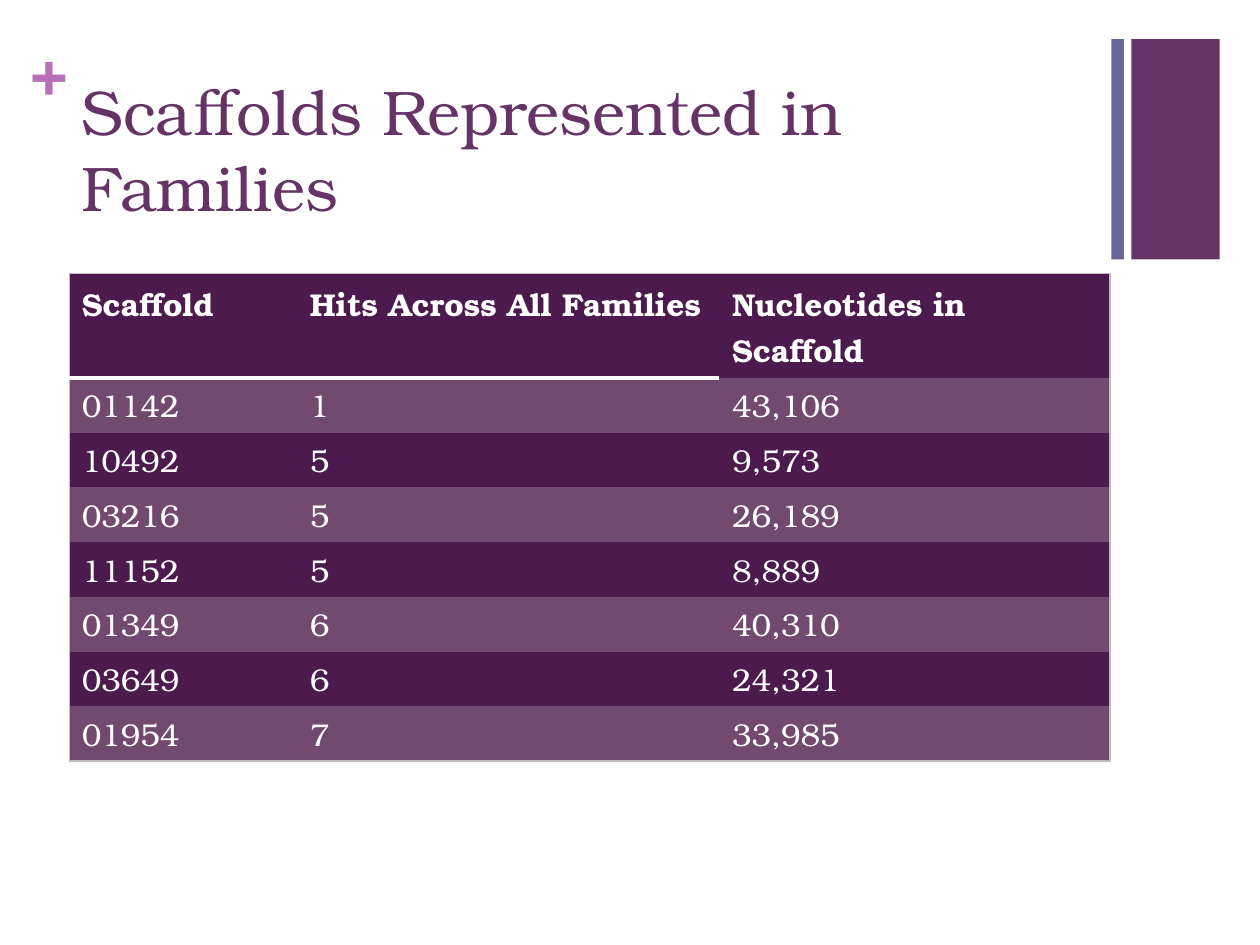
"""Build a slide with a table of scaffolds represented in families."""
from pptx import Presentation
from pptx.dml.color import RGBColor as RGB
from pptx.enum.shapes import MSO_SHAPE as Shape
from pptx.enum.text import MSO_ANCHOR as Anchor
from pptx.oxml import parse_xml
from pptx.oxml.ns import nsdecls, qn
from pptx.util import Inches, Pt

TITLE = "Scaffolds Represented in Families"
ROWS = [
    ("Scaffold", "Hits Across All Families", "Nucleotides in Scaffold"),
    ("01142", "1", "43,106"),
    ("10492", "5", "9,573"),
    ("03216", "5", "26,189"),
    ("11152", "5", "8,889"),
    ("01349", "6", "40,310"),
    ("03649", "6", "24,321"),
    ("01954", "7", "33,985"),
]
COLS = (1.81, 3.35, 3.1)
HEAD, BODY = 0.83, 3.04
LEFT, WIDTH = 0.55, sum(COLS)
FONT = "TeX Gyre Bonum"
PLAIN = "{2D5ABB26-0587-4C30-8999-92F81FD0307C}"

PLUM = RGB(0x66, 0x33, 0x66)
SLATE = RGB(0x66, 0x66, 0x99)
ORCHID = RGB(0xB8, 0x70, 0xB8)
DARK = RGB(0x4C, 0x1A, 0x4C)
LIGHT = RGB(0x72, 0x4A, 0x70)
EDGE = RGB(0xC2, 0xBB, 0xC2)
WHITE = RGB(0xFF, 0xFF, 0xFF)
BARS = [(8.98, 0.7, PLUM), (8.82, 0.1, SLATE)]


def style(para, size, color, bold=False):
    font = para.font
    font.name, font.size, font.bold = FONT, Pt(size), bold
    font.color.rgb = color


def add_bar(slide, left, width, color):
    bar = slide.shapes.add_shape(
        Shape.RECTANGLE, *map(Inches, (left, 0.31, width, 1.75)))
    bar.shadow.inherit = False
    bar.fill.solid()
    bar.fill.fore_color.rgb = color
    bar.line.fill.background()


def add_text(slide, text, box, color, inset, bold=False):
    frame = slide.shapes.add_textbox(*map(Inches, box)).text_frame
    frame.word_wrap = True
    frame.vertical_anchor = Anchor.TOP
    if not inset:
        frame.margin_left = frame.margin_right = 0
        frame.margin_top = frame.margin_bottom = 0
    para = frame.paragraphs[0]
    para.text = text
    style(para, 36, color, bold)


def edges(row, col):
    last_row, last_col = len(ROWS) - 1, len(COLS) - 1
    if col == 0:
        yield "lnL", EDGE, 1
    if col == last_col:
        yield "lnR", EDGE, 1
    if row == 0:
        yield "lnT", EDGE, 1
    if row == 0 and col < last_col:
        yield "lnB", WHITE, 3
    if row == last_row:
        yield "lnB", EDGE, 1


def add_table(slide):
    frame = slide.shapes.add_table(
        len(ROWS), len(COLS),
        *map(Inches, (LEFT, 2.17, WIDTH, HEAD + BODY)))
    table = frame.table
    table._tbl.tblPr.find(qn("a:tableStyleId")).text = PLAIN
    for col, width in zip(table.columns, COLS):
        col.width = Inches(width)
    for r, row in enumerate(ROWS):
        table.rows[r].height = Inches(BODY / (len(ROWS) - 1) if r else HEAD)
        for c, text in enumerate(row):
            cell = table.cell(r, c)
            para = cell.text_frame.paragraphs[0]
            para.text = text
            style(para, 18, WHITE, r == 0)
            props = cell._tc.get_or_add_tcPr()
            for tag, color, width in edges(r, c):
                props.append(parse_xml(
                    f'<a:{tag} {nsdecls("a")} w="{Pt(width)}"><a:solidFill>'
                    f'<a:srgbClr val="{color}"/></a:solidFill></a:{tag}>'))
            cell.fill.solid()
            cell.fill.fore_color.rgb = LIGHT if r % 2 else DARK


def main():
    deck = Presentation()
    deck.slide_width, deck.slide_height = Inches(10), Inches(7.5)
    slide = deck.slides.add_slide(deck.slide_layouts[6])
    for bar in BARS:
        add_bar(slide, *bar)
    add_text(slide, "+", (0.24, 0.25, 0.29, 0.61), ORCHID, False, True)
    add_text(slide, TITLE, (LEFT, 0.53, WIDTH, 1.22), PLUM, True)
    add_table(slide)
    deck.save("out.pptx")


if __name__ == "__main__":
    main()
